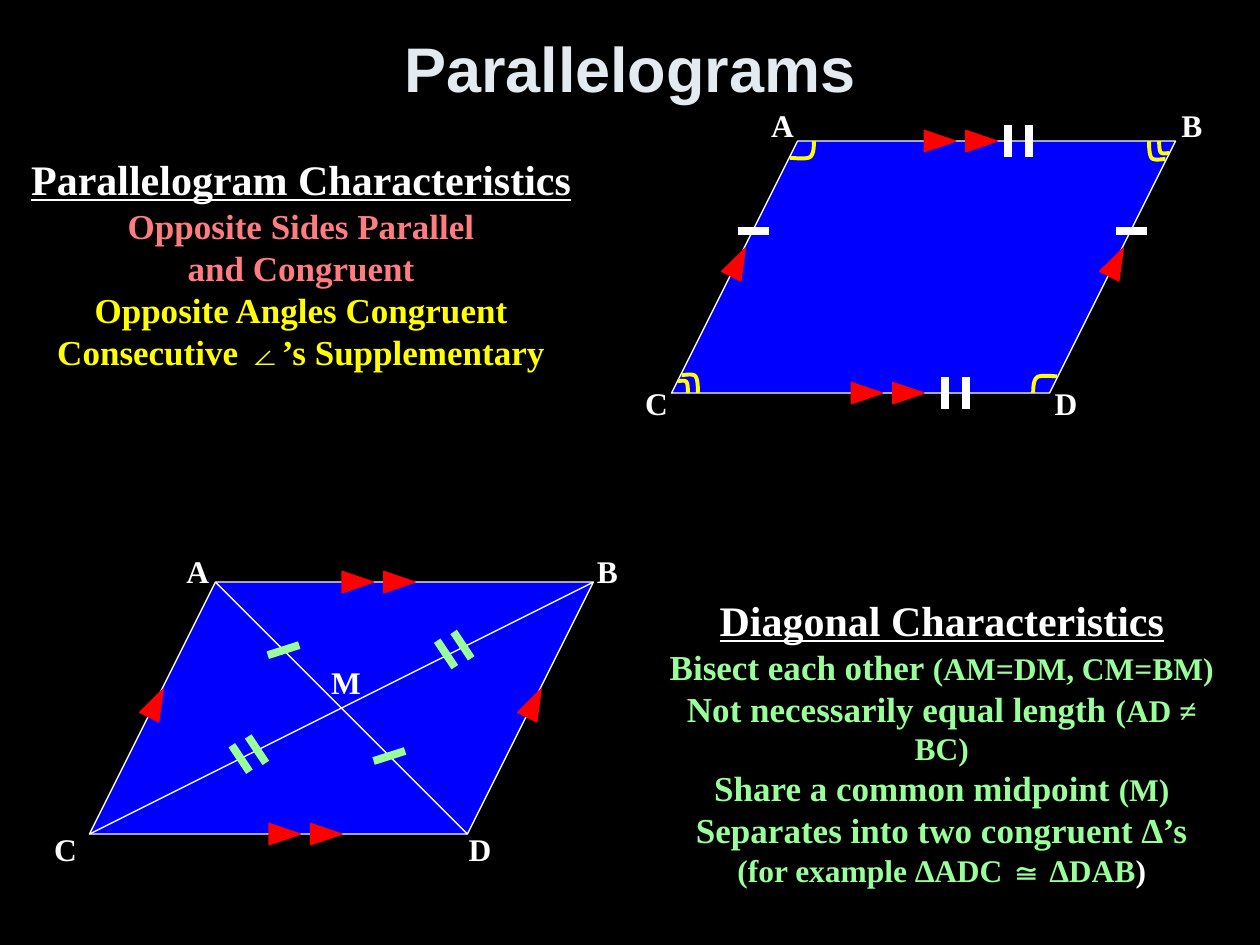
from lxml import etree
from pptx import Presentation
from pptx import util as u
from pptx.dml.color import RGBColor
from pptx.enum import shapes, text
from pptx.oxml.ns import qn

WHITE, BLUE, RED = "FFFFFF", "0000FF", "FF0000"
YELLOW, GREEN, PINK = "FFFF00", "99FF99", "FF7C80"
SERIF = "Times New Roman"
WIDTH, HEIGHT, SLANT = 4, 2, 1
CORNERS = {"A": (SLANT, 0), "B": (WIDTH, 0), "C": (0, HEIGHT), "D": (WIDTH - SLANT, HEIGHT)}
ARC = [
    [(0, 0.95), (0.16, 0.95), (0.68, 1.05), (0.84, 0.9)],
    [(0.84, 0.9), (1, 0.75), (1, 0.2), (1, 0)],
]


def paint(color_format, color):
    """Set a colour from a hex string."""
    color_format.rgb = RGBColor.from_string(color)


def outline(line, color, points):
    """Set the colour and width of a line."""
    paint(line.color, color)
    line.width = u.Pt(points)


def add_preset(slide, kind, left, top, width, height, fill, edge, rotation=0):
    """Add a filled preset shape without a shadow."""
    shape = slide.shapes.add_shape(kind, *map(u.Inches, (left, top, width, height)))
    shape.shadow.inherit = False
    shape.rotation = rotation
    shape.fill.solid()
    paint(shape.fill.fore_color, fill)
    outline(shape.line, edge, 0.75)
    return shape


def add_stroke(slide, start, end, color, points):
    """Add a straight line between two points."""
    stroke = slide.shapes.add_connector(
        shapes.MSO_CONNECTOR.STRAIGHT, *map(u.Inches, (*start, *end)))
    outline(stroke.line, color, points)
    etree.SubElement(stroke._element.spPr, qn("a:effectLst"))


def add_tick(slide, center, reach, color):
    """Add a thick congruence mark centred on a point."""
    (x, y), (dx, dy) = center, reach
    add_stroke(slide, (x - dx, y - dy), (x + dx, y + dy), color, 4.5)


def bezier(points, t):
    """Return the point at share t of a cubic curve."""
    weights = ((1 - t) ** 3, 3 * t * (1 - t) ** 2, 3 * t * t * (1 - t), t ** 3)
    return tuple(sum(w * p[axis] for w, p in zip(weights, points)) for axis in (0, 1))


def add_angle_mark(slide, x, y, width, height):
    """Add a rounded angle mark; signed sizes give its direction."""
    curve = [bezier(part, step / 8) for part in ARC for step in range(9)]
    places = [(u.Inches(x + width * px), u.Inches(y + height * py)) for px, py in curve]
    builder = slide.shapes.build_freeform(*places[0])
    builder.add_line_segments(places[1:], close=False)
    mark = builder.convert_to_shape()
    mark.shadow.inherit = False
    mark.fill.background()
    outline(mark.line, YELLOW, 2.25)


def add_text(slide, box, paragraphs, font=SERIF, wrap=False, anchor=text.MSO_ANCHOR.TOP):
    """Add centred bold text from runs of wording, size and colour."""
    frame = slide.shapes.add_textbox(*map(u.Inches, box)).text_frame
    frame.word_wrap = wrap
    frame.vertical_anchor = anchor
    for index, runs in enumerate(paragraphs):
        paragraph = frame.paragraphs[0] if index == 0 else frame.add_paragraph()
        paragraph.alignment = text.PP_ALIGN.CENTER
        for wording, size, color in runs:
            run = paragraph.add_run()
            run.text = wording
            run.font.name, run.font.size, run.font.bold = font, u.Pt(size), True
            run.font.underline = size == 24
            paint(run.font.color, color)


def add_label(slide, letter, x, y):
    """Add a point letter centred on a place."""
    add_text(slide, (x - 0.19, y - 0.2, 0.38, 0.4), [[(letter, 18, WHITE)]])


def add_parallelogram(slide, left, top, label_offsets):
    """Add a lettered parallelogram with arrows on its parallel sides."""
    kinds = shapes.MSO_SHAPE
    body = add_preset(slide, kinds.PARALLELOGRAM, left, top, WIDTH, HEIGHT, BLUE, WHITE)
    body.adjustments[0] = SLANT / HEIGHT
    slanted = [(x, 0.96, 26.5) for x in (0.53, 0.53 + WIDTH - SLANT)]
    level = [(x + gap, y, 90) for x, y in ((2.13, 0), (1.55, HEIGHT)) for gap in (0, 0.33)]
    for x, y, turn in slanted + level:
        add_preset(slide, kinds.ISOSCELES_TRIANGLE, left + x - 0.085, top + y - 0.125,
                   0.17, 0.25, RED, RED, turn)
    for letter, (dx, dy) in label_offsets.items():
        x, y = CORNERS[letter]
        add_label(slide, letter, left + x + dx, top + y + dy)


def add_side_marks(slide, left, top):
    """Mark the congruent sides and angles."""
    for x in (0.65, 0.65 + WIDTH - SLANT):
        add_tick(slide, (left + x, top + 0.71), (0.125, 0), WHITE)
    for x, y in ((2.67, 0), (2.17, HEIGHT)):
        for gap in (0, 0.17):
            add_tick(slide, (left + x + gap, top + y), (0, 0.125), WHITE)
    single, double = [(-0.06, 0.19, 0.14)], [(0.05, 0.08, 0.1), (0.08, 0.13, 0.15)]
    for letter, marks, across, down in (
            ("A", single, 1, 1), ("D", single, -1, -1),
            ("C", double, 1, -1), ("B", double, -1, 1)):
        x, y = CORNERS[letter]
        for inset, width, height in marks:
            add_angle_mark(slide, left + x + across * inset, top + y,
                           across * width, down * height)


def add_diagonals(slide, left, top):
    """Draw both diagonals and mark their congruent halves."""
    places = {name: (left + x, top + y) for name, (x, y) in CORNERS.items()}
    for start, end in ("AD", "CB"):
        add_stroke(slide, places[start], places[end], WHITE, 0.75)
    for x, y in ((1.54, 0.54), (2.38, 1.38)):
        add_tick(slide, (left + x, top + y), (0.125, -0.04), GREEN)
    for x, y in ((2.83, 0.57), (1.2, 1.4)):
        for gap in (0, 1):
            add_tick(slide, (left + x + 0.13 * gap, top + y - 0.07 * gap),
                     (0.07, 0.105), GREEN)
    add_label(slide, "M", left + 2.01, top + 0.79)


def main():
    """Build the slide and save it."""
    deck = Presentation()
    deck.slide_width, deck.slide_height = u.Inches(10), u.Inches(7.5)
    slide = deck.slides.add_slide(deck.slide_layouts[6])
    slide.background.fill.solid()
    paint(slide.background.fill.fore_color, "000000")

    add_text(slide, (0.75, 0.16, 8.5, 0.75), [[("Parallelograms", 36, "E3EBF1")]],
             "Arial", True, text.MSO_ANCHOR.MIDDLE)

    add_parallelogram(slide, 5.33, 1.12, {
        "A": (-0.12, -0.13), "B": (0.13, -0.13), "C": (-0.12, 0.08), "D": (0.13, 0.08)})
    add_side_marks(slide, 5.33, 1.12)
    add_parallelogram(slide, 0.71, 4.62, {
        "A": (-0.14, -0.09), "B": (0.11, -0.09), "C": (-0.19, 0.12), "D": (0.1, 0.12)})
    add_diagonals(slide, 0.71, 4.62)

    add_text(slide, (0.09, 1.17, 4.6, 1.83), [
        [("Parallelogram Characteristics", 24, WHITE)],
        [("Opposite Sides Parallel", 20, PINK)],
        [("and Congruent", 20, PINK)],
        [("Opposite Angles Congruent", 20, YELLOW)],
        [("Consecutive ∠’s Supplementary", 20, YELLOW)]])
    add_text(slide, (5.11, 4.67, 4.73, 2.13), [
        [("Diagonal Characteristics", 24, WHITE)],
        [("Bisect each other ", 20, GREEN), ("(AM=DM, CM=BM)", 18, GREEN)],
        [("Not necessarily equal length ", 20, GREEN), ("(AD ≠ BC)", 18, GREEN)],
        [("Share a common midpoint ", 20, GREEN), ("(M)", 18, GREEN)],
        [("Separates into two congruent ∆’s", 20, GREEN)],
        [("(for example ∆ADC ≅ ∆DAB", 18, GREEN), (")", 18, WHITE)]], wrap=True)
    deck.save("out.pptx")


if __name__ == "__main__":
    main()
